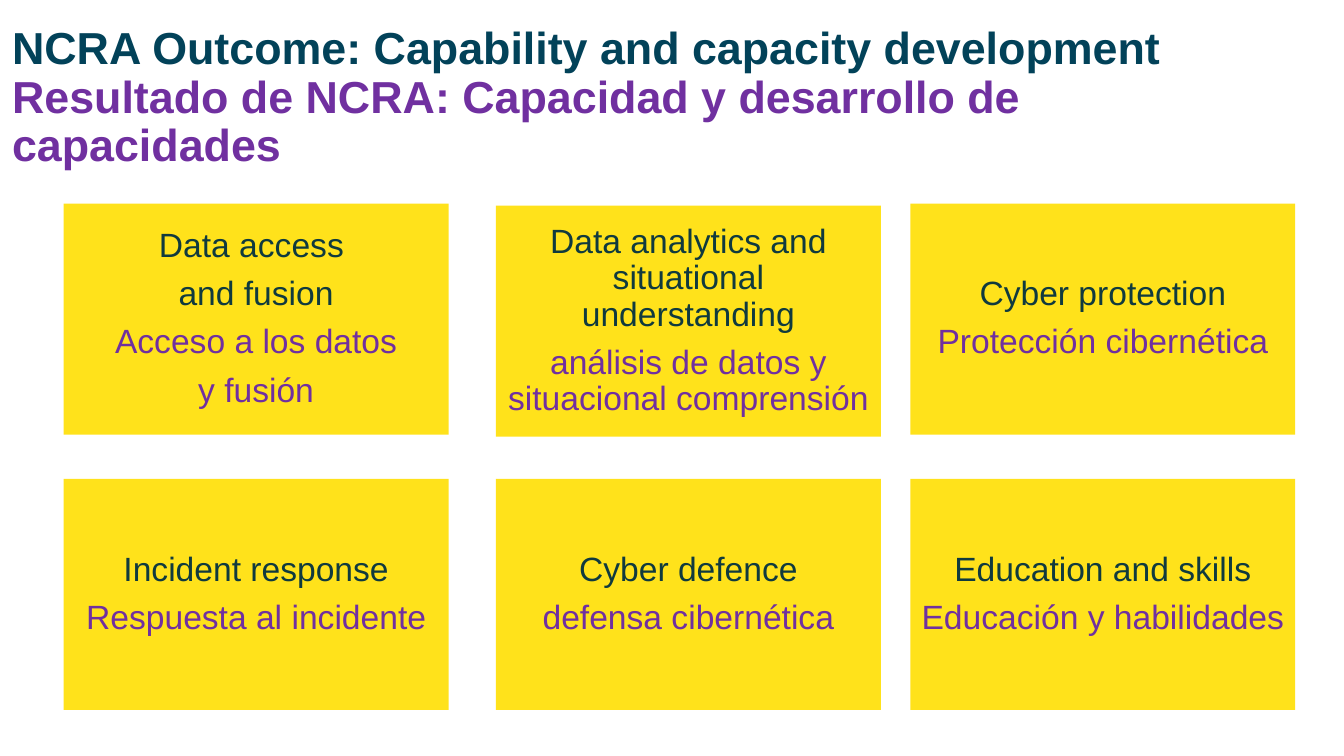
from dataclasses import dataclass

from pptx import Presentation
from pptx.dml.color import RGBColor
from pptx.enum import shapes, text
from pptx.util import Pt

TEAL = RGBColor(0x02, 0x42, 0x59)
DARK = RGBColor(0x10, 0x3A, 0x3E)
PURPLE = RGBColor(0x70, 0x30, 0xA0)
YELLOW = RGBColor(0xFF, 0xE2, 0x1B)
FONT = "Arial"

CARD_WIDTH, CARD_HEIGHT = 275, 165
COLUMNS = (45.4, 354.2, 650.2)
ROWS = (145.4, 342)


@dataclass
class Card:
    english: tuple[str, ...]
    spanish: tuple[str, ...]
    drop: float = 0  # offset below the row's top edge


CARDS = (
    Card(("Data access ", "and fusion"), ("Acceso a los datos", "y fusión")),
    Card(("Data analytics and situational understanding",),
         ("análisis de datos y situacional comprensión",), drop=1.5),
    Card(("Cyber protection",), ("Protección cibernética",)),
    Card(("Incident response",), ("Respuesta al incidente",)),
    Card(("Cyber defence",), ("defensa cibernética",)),
    Card(("Education and skills",), ("Educación y habilidades",)),
)


def add_span(para, words: str, size: float, color: RGBColor, bold: bool = False) -> None:
    span = para.add_run()
    span.text = words
    span.font.name = FONT
    span.font.size = Pt(size)
    span.font.bold = bold
    span.font.color.rgb = color


def set_frame(frame, margin: float) -> None:
    frame.word_wrap = True
    frame.auto_size = text.MSO_AUTO_SIZE.NONE
    frame.vertical_anchor = text.MSO_ANCHOR.MIDDLE
    frame.margin_left = frame.margin_right = Pt(margin)
    frame.margin_top = frame.margin_bottom = Pt(margin)


def add_title(page) -> None:
    title = page.shapes.title
    title.left, title.top, title.width, title.height = Pt(8.6), Pt(0), Pt(888), Pt(141)
    set_frame(title.text_frame, 0)
    para = title.text_frame.paragraphs[0]
    para.alignment = text.PP_ALIGN.LEFT
    para.line_spacing = 0.9
    add_span(para, "NCRA Outcome: Capability and capacity development", 32, TEAL, True)
    para.add_line_break()
    add_span(para, "Resultado de NCRA: Capacidad y desarrollo de capacidades", 32, PURPLE, True)


def add_card(page, card: Card, left: float, top: float) -> None:
    box = page.shapes.add_shape(shapes.MSO_SHAPE.RECTANGLE, Pt(left), Pt(top + card.drop),
                                Pt(CARD_WIDTH), Pt(CARD_HEIGHT))
    box.shadow.inherit = False
    box.fill.solid()
    box.fill.fore_color.rgb = YELLOW
    box.line.fill.background()
    frame = box.text_frame
    set_frame(frame, 7.2)
    lines = [(line, DARK) for line in card.english] + [(line, PURPLE) for line in card.spanish]
    for number, (line, color) in enumerate(lines):
        para = frame.add_paragraph() if number else frame.paragraphs[0]
        para.alignment = text.PP_ALIGN.CENTER
        para.line_spacing = 0.9
        para.space_after = Pt(8.4)
        add_span(para, line, 24, color)


def main() -> None:
    deck = Presentation()
    deck.slide_width, deck.slide_height = Pt(960), Pt(540)
    page = deck.slides.add_slide(deck.slide_layouts[5])
    add_title(page)
    # Outcome cards, row by row
    for number, card in enumerate(CARDS):
        row, column = divmod(number, len(COLUMNS))
        add_card(page, card, COLUMNS[column], ROWS[row])
    deck.save("out.pptx")


if __name__ == "__main__":
    main()
